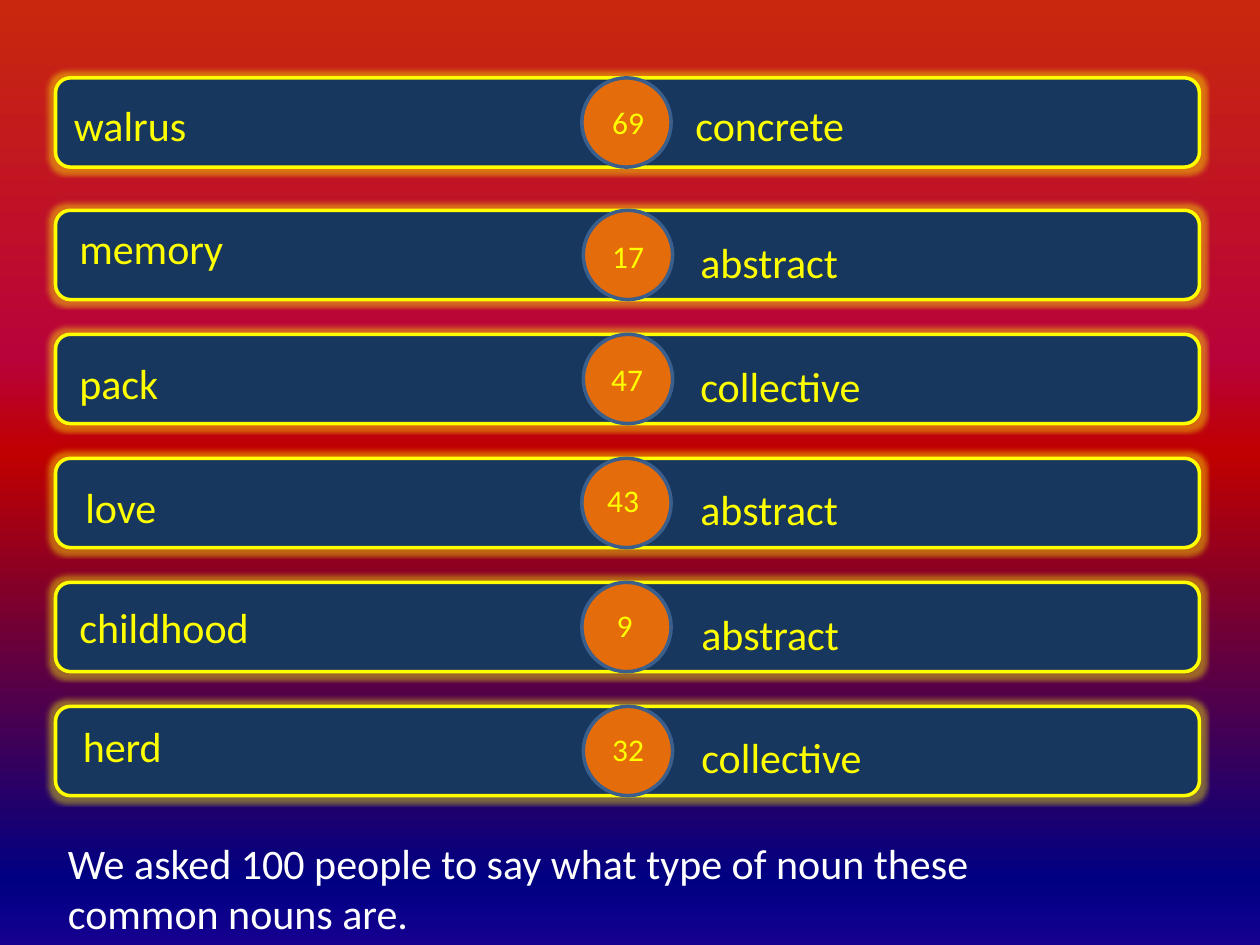
"""Build a survey slide that matches common nouns with their noun type."""
from dataclasses import dataclass

from pptx import Presentation
from pptx.dml.color import RGBColor
from pptx.enum.shapes import MSO_SHAPE
from pptx.enum.text import MSO_AUTO_SIZE
from pptx.oxml import parse_xml
from pptx.oxml.ns import nsdecls, qn
from pptx.util import Cm, Pt

ROUNDED = MSO_SHAPE.ROUNDED_RECTANGLE
OVAL = MSO_SHAPE.OVAL
GROW = MSO_AUTO_SIZE.SHAPE_TO_FIT_TEXT


@dataclass(frozen=True)
class Theme:
    font: str = "Calibri"
    body_size: int = 24
    score_size: int = 18
    line_width: int = 2
    bar: str = "17375E"
    accent: str = "FFFF00"
    circle: str = "E46C0A"
    circle_line: str = "3A5F8C"
    caption: str = "FFFFFF"
    background: tuple = ((0, "C9280D"), (38, "B8023A"), (48, "C00000"),
                         (93, "000082"), (100, "150090"))


class SurveySlide:
    def __init__(self, slide, theme):
        self.slide = slide
        self.theme = theme

    def gradient_background(self):
        fill = self.slide.background.fill
        fill.gradient()
        fill.gradient_angle = 270
        stops = self.slide.element.find(".//" + qn("a:gsLst"))
        stops.clear()
        for percent, color in self.theme.background:
            stops.append(parse_xml(
                f'<a:gs {nsdecls("a")} pos="{percent * 1000}">'
                f'<a:srgbClr val="{color}"/></a:gs>'))

    def outlined_shape(self, kind, left, top, width, height, fill, line):
        shape = self.slide.shapes.add_shape(
            kind, Cm(left), Cm(top), Cm(width), Cm(height))
        shape.shadow.inherit = False
        shape.fill.solid()
        shape.fill.fore_color.rgb = RGBColor.from_string(fill)
        shape.line.color.rgb = RGBColor.from_string(line)
        shape.line.width = Pt(self.theme.line_width)
        return shape

    def bar(self, top):
        shape = self.outlined_shape(ROUNDED, 1.12, top, 23.06, 1.8,
                                    self.theme.bar, self.theme.accent)
        effects = shape.element.spPr.find(qn("a:effectLst"))
        effects.append(parse_xml(
            f'<a:glow {nsdecls("a")} rad="{Pt(5)}">'
            f'<a:srgbClr val="{self.theme.accent}">'
            '<a:alpha val="40000"/></a:srgbClr></a:glow>'))

    def circle(self, left, top):
        self.outlined_shape(OVAL, left, top, 1.8, 1.8,
                            self.theme.circle, self.theme.circle_line)

    def text(self, words, left, top, width, height, size, color):
        box = self.slide.shapes.add_textbox(
            Cm(left), Cm(top), Cm(width), Cm(height))
        frame = box.text_frame
        frame.word_wrap = True
        frame.auto_size = GROW
        paragraph = frame.paragraphs[0]
        paragraph.text = words
        paragraph.font.name = self.theme.font
        paragraph.font.size = Pt(size)
        paragraph.font.color.rgb = RGBColor.from_string(color)

    def label(self, words, left, top, width):
        self.text(words, left, top, width, 1.28,
                  self.theme.body_size, self.theme.accent)

    def score(self, words, left, top):
        self.text(words, left, top, 1.2, 1.03,
                  self.theme.score_size, self.theme.accent)

    def caption(self, words):
        self.text(words, 1.12, 16.76, 20.8, 2.31,
                  self.theme.body_size, self.theme.caption)


BAR_TOPS = [1.57] + [4.24 + 2.5 * row for row in range(5)]
CIRCLE_LEFTS = [11.73, 11.76, 11.76, 11.73, 11.73, 11.76]
NOUNS = [
    ("walrus", 1.24, 1.88, 4.27),
    ("memory", 1.35, 4.37, 4.17),
    ("pack", 1.35, 7.09, 2.77),
    ("love", 1.47, 9.58, 2.64),
    ("childhood", 1.35, 12.01, 6.96),
    ("herd", 1.42, 14.4, 2.67),
]
NOUN_TYPES = [
    ("concrete", 13.77, 1.88, 3.53),
    ("abstract", 13.87, 4.65, 3.84),
    ("collective", 13.87, 7.14, 4.42),
    ("abstract", 13.87, 9.63, 3.84),
    ("abstract", 13.89, 12.14, 4.39),
    ("collective", 13.89, 14.63, 3.99),
]
SCORES = [
    ("69", 12.09, 1.96),
    ("17", 12.09, 4.65),
    ("47", 12.07, 7.14),
    ("43", 11.99, 9.58),
    (" 9", 12.04, 12.09),
    ("32", 12.09, 14.6),
]


def main():
    presentation = Presentation()
    presentation.slide_width = Cm(25.4)
    presentation.slide_height = Cm(19.05)
    blank_layout = presentation.slide_layouts[6]
    survey = SurveySlide(presentation.slides.add_slide(blank_layout), Theme())

    survey.gradient_background()
    for top in BAR_TOPS:
        survey.bar(top)
    for left, top in zip(CIRCLE_LEFTS, BAR_TOPS):
        survey.circle(left, top)
    for label in NOUNS + NOUN_TYPES:
        survey.label(*label)
    for score in SCORES:
        survey.score(*score)
    survey.caption("We asked 100 people to say what type of noun "
                   "these common nouns are.")
    presentation.save("out.pptx")


if __name__ == "__main__":
    main()
